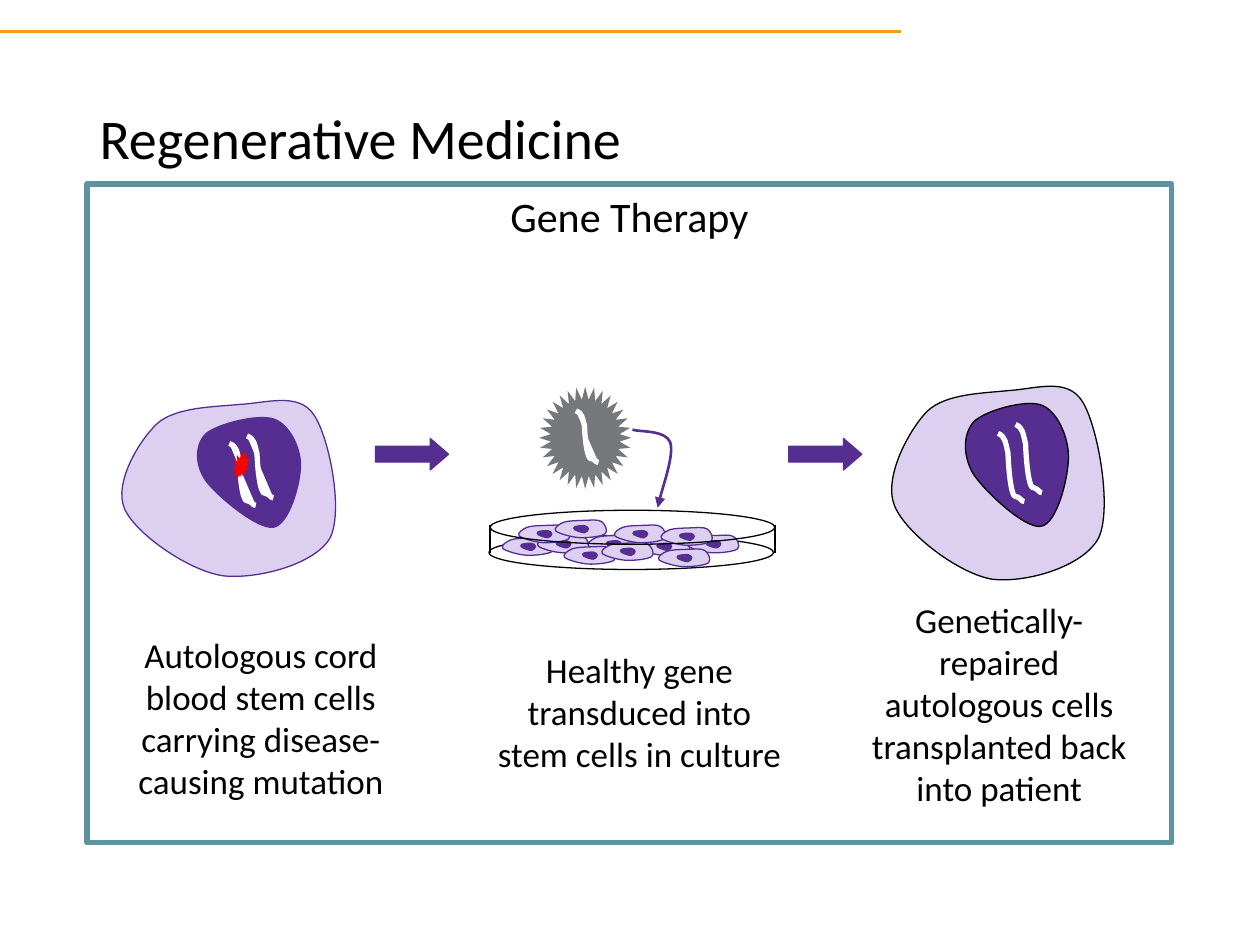
"""Build a slide on gene therapy with cord blood stem cells."""
from typing import NamedTuple

from lxml.etree import SubElement
from pptx import Presentation
from pptx.dml.color import RGBColor
from pptx.enum.shapes import MSO_CONNECTOR, MSO_SHAPE
from pptx.enum.text import MSO_ANCHOR, MSO_AUTO_SIZE, PP_ALIGN
from pptx.oxml.ns import qn
from pptx.util import Pt

PX = 9144
FONT = "Calibri"
BLACK, WHITE, RED, GRAY = "000000", "FFFFFF", "FF0000", "77787B"
PURPLE, LILAC, TEAL, ORANGE = "562E91", "DCCFF0", "5F939F", "F19D19"


class Box(NamedTuple):
    x: int
    y: int
    w: int
    h: int

    def emu(self) -> list[int]:
        return [v * PX for v in self]


class Style(NamedTuple):
    fill: str | None = None
    line: str | None = None
    width: float = 0.75


class Outline(NamedTuple):
    w: int
    h: int
    points: list[tuple[int, int]]
    closed: bool = True


class Caption(NamedTuple):
    box: Box
    text: str
    size: int = 20


class Cell(NamedTuple):
    body: Box
    nucleus: Box
    strands: list[Box]
    body_style: Style
    nucleus_style: Style
    strand_style: Style


BODY = Outline(183, 149, [
    (100, 10), (80, 12), (50, 12), (35, 25), (20, 39), (0, 73), (9, 93), (18, 113),
    (60, 142), (87, 146), (114, 149), (160, 137), (172, 116), (183, 94), (171, 35),
    (159, 18), (147, 0), (121, 9), (100, 10)])
NUCLEUS = Outline(85, 93, [
    (63, 4), (50, 0), (18, 8), (9, 16), (0, 25), (0, 41), (9, 54), (18, 66),
    (50, 93), (63, 91), (76, 89), (85, 56), (85, 41), (85, 27), (76, 8), (63, 4)])
STRAND = Outline(21, 49, [
    (0, 0), (6, 2), (6, 7), (8, 14), (8, 15), (9, 40), (13, 45), (14, 46),
    (15, 45), (16, 46), (21, 49), (18, 49), (21, 49)], False)
TRANSFER = Outline(34, 62, [
    (0, 0), (5, 2), (26, 0), (30, 10), (33, 20), (22, 51), (20, 62)], False)

PURPLE_EDGE = Style(PURPLE, PURPLE)
LILAC_CELL = Style(LILAC, PURPLE)
WHITE_STRAND = Style(WHITE, WHITE, 3)
OUTLINE_ONLY = Style(None, BLACK)

MUTATED = Cell(Box(90, 311, 183, 149), Box(154, 328, 85, 93),
               [Box(182, 352, 21, 49), Box(196, 346, 21, 49)],
               LILAC_CELL, Style(PURPLE), WHITE_STRAND)
REPAIRED = Cell(Box(701, 299, 182, 164), Box(764, 317, 84, 103),
                [Box(792, 344, 21, 54), Box(806, 337, 21, 54)],
                Style(LILAC, BLACK), Style(PURPLE, BLACK), Style(PURPLE, WHITE, 3))
CULTURE_BACK = [(397, 426)]
CULTURE_FRONT = [(425, 424), (465, 424), (505, 426), (544, 424), (410, 416), (446, 433),
                 (486, 416), (523, 418), (521, 435), (476, 430), (439, 412)]
FRAME = Box(69, 146, 861, 523)
CAPTIONS = [
    Caption(Box(96, 498, 222, 145),
            "Autologous cord blood stem cells carrying disease-causing mutation"),
    Caption(Box(379, 510, 257, 111), "Healthy gene transduced into stem cells in culture"),
    Caption(Box(682, 470, 222, 178),
            "Genetically-repaired autologous cells transplanted back into patient"),
    Caption(Box(69, 146, 861, 50), "Gene Therapy", 24)]


def rgb(color: str) -> RGBColor:
    """Turn a hex string into a colour."""
    return RGBColor.from_string(color)


def paint(sp, style: Style):
    """Apply fill and line to a shape and drop its shadow."""
    sp.shadow.inherit = False
    if style.fill:
        sp.fill.solid()
        sp.fill.fore_color.rgb = rgb(style.fill)
    else:
        sp.fill.background()
    if style.line:
        sp.line.color.rgb = rgb(style.line)
        sp.line.width = Pt(style.width)
    else:
        sp.line.fill.background()
    return sp


def preset(shapes, kind: MSO_SHAPE, box: Box, style: Style, *adjustments: float) -> None:
    """Draw a preset shape."""
    sp = paint(shapes.add_shape(kind, *box.emu()), style)
    for i, value in enumerate(adjustments):
        sp.adjustments[i] = value


def curve(shapes, outline: Outline, box: Box, style: Style):
    """Draw an outline scaled into a box, each three points making one cubic curve."""
    points = [(round((box.x + x * box.w / outline.w) * PX),
               round((box.y + y * box.h / outline.h) * PX)) for x, y in outline.points]
    fb = shapes.build_freeform(*points[0], scale=1.0)
    fb.add_line_segments(points[1:], close=outline.closed)
    sp = fb.convert_to_shape()
    geom = next(sp._element.iter(qn("a:path")))
    segments = geom.findall(qn("a:lnTo"))
    for i in range(0, len(segments), 3):
        cubic = SubElement(geom, qn("a:cubicBezTo"))
        segments[i].addprevious(cubic)
        for segment in segments[i:i + 3]:
            cubic.append(segment[0])
            geom.remove(segment)
    return paint(sp, style)


def line(shapes, x1: int, y1: int, x2: int, y2: int, color: str, width: float) -> None:
    """Draw a straight line."""
    cx = shapes.add_connector(MSO_CONNECTOR.STRAIGHT, x1 * PX, y1 * PX, x2 * PX, y2 * PX)
    cx.line.color.rgb = rgb(color)
    cx.line.width = Pt(width)
    SubElement(cx._element.spPr, qn("a:effectLst"))


def draw_cell(shapes, cell: Cell) -> None:
    """Draw a large cell with its nucleus and gene strands."""
    curve(shapes, BODY, cell.body, cell.body_style)
    curve(shapes, NUCLEUS, cell.nucleus, cell.nucleus_style)
    for box in cell.strands:
        curve(shapes, STRAND, box, cell.strand_style)


def draw_culture(shapes, spots: list[tuple[int, int]]) -> None:
    """Draw the small cells in the dish."""
    for x, y in spots:
        curve(shapes, BODY, Box(x, y, 44, 15), LILAC_CELL)
        curve(shapes, NUCLEUS, Box(x + 16, y + 5, 12, 6), PURPLE_EDGE)


def draw_dish(shapes) -> None:
    """Draw the dish, its cells and the gene carrier."""
    preset(shapes, MSO_SHAPE.OVAL, Box(388, 425, 226, 27), OUTLINE_ONLY)
    draw_culture(shapes, CULTURE_BACK)
    for x in (389, 615):
        line(shapes, x, 439, x, 417, BLACK, 0.75)
    preset(shapes, MSO_SHAPE.STAR_32_POINT, Box(428, 307, 73, 81), Style(GRAY), 0.375)
    curve(shapes, STRAND, Box(457, 326, 18, 41), WHITE_STRAND)
    arrow = curve(shapes, TRANSFER, Box(502, 341, 34, 62), Style(None, PURPLE, 1.5))
    SubElement(arrow.line._get_or_add_ln(), qn("a:tailEnd"), type="triangle")
    draw_culture(shapes, CULTURE_FRONT)
    preset(shapes, MSO_SHAPE.OVAL, Box(389, 405, 226, 27), OUTLINE_ONLY)


def write(tf, text: str, size: int, align: PP_ALIGN):
    """Write one formatted paragraph."""
    tf.word_wrap = True
    tf.text = text
    p = tf.paragraphs[0]
    p.alignment = align
    p.font.name, p.font.size = FONT, Pt(size)
    p.font.color.rgb = rgb(BLACK)
    return p


def main() -> None:
    """Build and save the slide."""
    prs = Presentation()
    prs.slide_width, prs.slide_height = 1000 * PX, 750 * PX
    s = prs.slides.add_slide(prs.slide_layouts[5])
    title = s.shapes.title
    title.left, title.top, title.width, title.height = Box(69, 40, 862, 145).emu()
    tf = title.text_frame
    write(tf, "Regenerative Medicine", 32, PP_ALIGN.LEFT).line_spacing = 0.9
    tf.vertical_anchor, tf.auto_size = MSO_ANCHOR.MIDDLE, MSO_AUTO_SIZE.NONE
    line(s.shapes, 0, 25, 715, 25, ORANGE, 1.5)
    mutated = s.shapes.add_group_shape().shapes
    draw_cell(mutated, MUTATED)
    preset(mutated, MSO_SHAPE.EXPLOSION2, Box(185, 357, 14, 24), Style(RED))
    draw_cell(s.shapes.add_group_shape().shapes, REPAIRED)
    for x in (298, 626):
        preset(s.shapes, MSO_SHAPE.RIGHT_ARROW, Box(x, 348, 58, 25), PURPLE_EDGE, 0.5, 0.58)
    draw_dish(s.shapes.add_group_shape().shapes)
    preset(s.shapes, MSO_SHAPE.RECTANGLE, FRAME, Style(None, TEAL, 3))
    for caption in CAPTIONS:
        tf = s.shapes.add_textbox(*caption.box.emu()).text_frame
        write(tf, caption.text, caption.size, PP_ALIGN.CENTER)
    prs.save("out.pptx")


if __name__ == "__main__":
    main()
